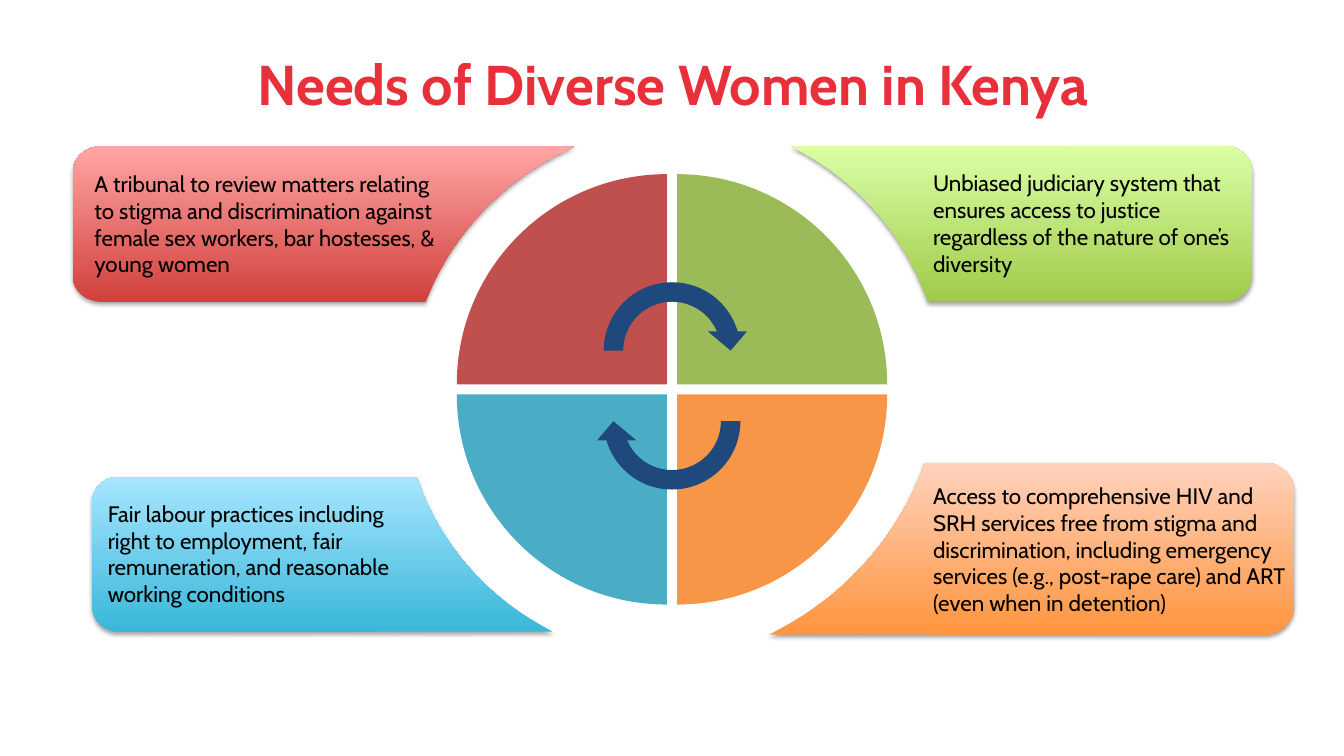
import math
import pptx
import pptx.util
import pptx.dml.color
import pptx.enum.shapes
import pptx.enum.text
import pptx.oxml
import pptx.oxml.ns

THEME = {
    "font": "Cabin", "title_size": 40, "body_size": 16,
    "title": "E8303B", "text": "000000", "arrow": "1F497D",
    "red": ("C0504D", "D1403C", "FFA6A5"),  # quadrant, panel bottom, panel top
    "green": ("9BBB59", "A0CA4A", "DAFFA5"),
    "orange": ("F79646", "FF953E", "FFD2BD"),
    "blue": ("4BACC6", "39B7D8", "A7E6FF"),
}

prs = pptx.Presentation()
prs.slide_height = pptx.util.Inches(7.5)
prs.slide_width = prs.slide_height * 16 // 9
s = prs.slides.add_slide(prs.slide_layouts[6])
CELL = prs.slide_height / 75  # all lengths below are in square grid cells
rgb = pptx.dml.color.RGBColor.from_string
qn = pptx.oxml.ns.qn


def arc(cx, cy, radius, start, end):
    """Start, two control points and end of a Bézier arc, angles in degrees."""
    a, b = math.radians(start), math.radians(end)
    k = 4 / 3 * math.tan((b - a) / 4)
    unit = [(math.cos(a), math.sin(a)),
            (math.cos(a) - k * math.sin(a), math.sin(a) + k * math.cos(a)),
            (math.cos(b) + k * math.sin(b), math.sin(b) - k * math.cos(b)),
            (math.cos(b), math.sin(b))]
    return [(cx + radius * x, cy + radius * y) for x, y in unit]


def outline(points, arc_starts):
    """Closed freeform; the three points after each arc start form a curve."""
    points = [(round(x * CELL), round(y * CELL)) for x, y in points]
    fb = s.shapes.build_freeform(*points[0])
    fb.add_line_segments(points[1:], close=True)
    sp = fb.convert_to_shape()
    lines = list(sp._element.iter(qn("a:lnTo")))
    for start in arc_starts:
        first, *others = lines[start:start + 3]
        first.tag = qn("a:cubicBezTo")
        for line in others:
            first.append(line[0])
            line.getparent().remove(line)
    sp.line.fill.background()
    sp.shadow.inherit = False
    return sp


# Wheel geometry; side and level are -1 for left or top, 1 for right or bottom
CX, CY, GAP, RADIUS = 66.67, 38.63, 0.5, 20.85
RING, CORNER = 26.8, 2.6
TIP, OUTER, NEAR, FAR = 11.8, 57.5, 8.7, 24.1

# Panel outline for one quarter, measured from the wheel's centre
quarter = (
    arc(0, 0, RING, math.degrees(math.acos(TIP / RING)),
        math.degrees(math.asin(NEAR / RING)))
    + arc(OUTER - CORNER, NEAR + CORNER, CORNER, -90, 0)
    + arc(OUTER - CORNER, FAR - CORNER, CORNER, 0, 90)
)

# Colour, side, level, panel box, text box, wording
needs = [
    ("orange", 1, 1, (76.3, 45.9, 52.1, 17.1), (92.57, 47.32, 35.8, 14.5),
     "Access to comprehensive HIV and SRH services free from stigma and discrimination, "
     "including emergency services (e.g., post-rape care) and ART (even when in detention)"),
    ("blue", -1, 1, (9.15, 47.3, 45.7, 15.4), (10.7, 49.1, 29.6, 11.8),
     "Fair labour practices including right to employment, fair remuneration, "
     "and reasonable working conditions"),
    ("green", 1, -1, (78.5, 14.5, 45.7, 15.4), (92.57, 16.3, 30.2, 11.8),
     "Unbiased judiciary system that ensures access to justice regardless of "
     "the nature of one’s diversity"),
    ("red", -1, -1, (7.2, 14.5, 49.8, 15.45), (9.37, 16.37, 35.1, 11.8),
     "A tribunal to review matters relating to stigma and discrimination against "
     "female sex workers, bar hostesses, & young women"),
]

# Panels: the quarter outline mirrored and stretched into each box
for color, side, level, (x, y, w, h), _, _ in needs:
    tip_x = x if side > 0 else x + w
    near_y = y if level > 0 else y + h
    sp = outline([(tip_x + side * (px - TIP) * w / (OUTER - TIP),
                   near_y + level * (py - NEAR) * h / (FAR - NEAR)) for px, py in quarter],
                 (0, 4, 8))
    sp.fill.gradient()
    sp.fill.gradient_angle = 90
    for stop, position, shade in zip(sp.fill.gradient_stops, (0, 1), THEME[color][1:]):
        stop.position = position
        stop.color.rgb = rgb(shade)
    effects = sp._element.spPr.find(qn("a:effectLst"))
    effects.append(pptx.oxml.parse_xml(
        f'<a:outerShdw {pptx.oxml.ns.nsdecls("a")} blurRad="39370" dist="22860" '
        'dir="5400000" rotWithShape="0"><a:srgbClr val="000000">'
        '<a:alpha val="35000"/></a:srgbClr></a:outerShdw>'))

# Wheel quadrants
for color, side, level, *_ in needs:
    sp = outline([(CX + side * (GAP + px), CY + level * (GAP + py))
                  for px, py in arc(0, 0, RADIUS, 0, 90) + [(0, 0)]], (0,))
    sp.fill.solid()
    sp.fill.fore_color.rgb = rgb(THEME[color][0])

# Title and panel texts
texts = [((8.3, 2, 116.9, 12.5), "Needs of Diverse Women in Kenya", True)]
texts += [(box, wording, False) for *_, box, wording in needs]
for box, wording, is_title in texts:
    tf = s.shapes.add_textbox(*[round(v * CELL) for v in box]).text_frame
    tf.word_wrap = True
    p = tf.paragraphs[0]
    p.text = wording
    p.font.name = THEME["font"]
    p.font.size = pptx.util.Pt(THEME["title_size" if is_title else "body_size"])
    p.font.bold = is_title
    p.font.color.rgb = rgb(THEME["title" if is_title else "text"])
    if is_title:
        tf.vertical_anchor = pptx.enum.text.MSO_ANCHOR.MIDDLE
        p.alignment = pptx.enum.text.PP_ALIGN.CENTER
    else:
        tf.margin_left = tf.margin_right = 0
        tf.auto_size = pptx.enum.text.MSO_AUTO_SIZE.SHAPE_TO_FIT_TEXT

# Rotation arrows
ARROW = 15.5
for top, rotation in ((27.03, 0), (34.03, 180)):
    sp = s.shapes.add_shape(
        pptx.enum.shapes.MSO_SHAPE.CIRCULAR_ARROW,
        *[round(v * CELL) for v in (CX - ARROW / 2, top, ARROW, ARROW)])
    sp.rotation = rotation
    sp.shadow.inherit = False
    sp.fill.solid()
    sp.fill.fore_color.rgb = rgb(THEME["arrow"])
    sp.line.fill.background()

prs.save("out.pptx")
